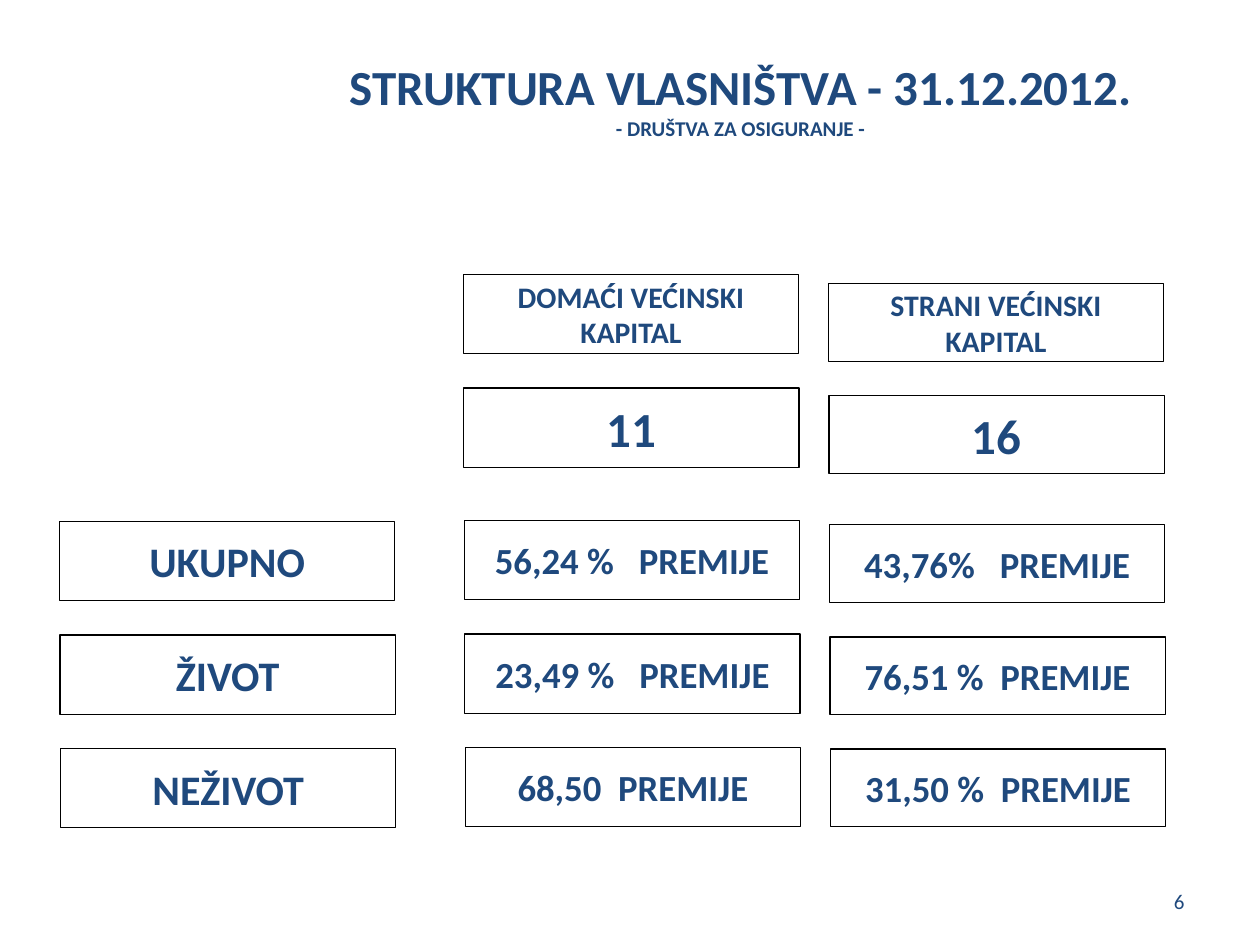
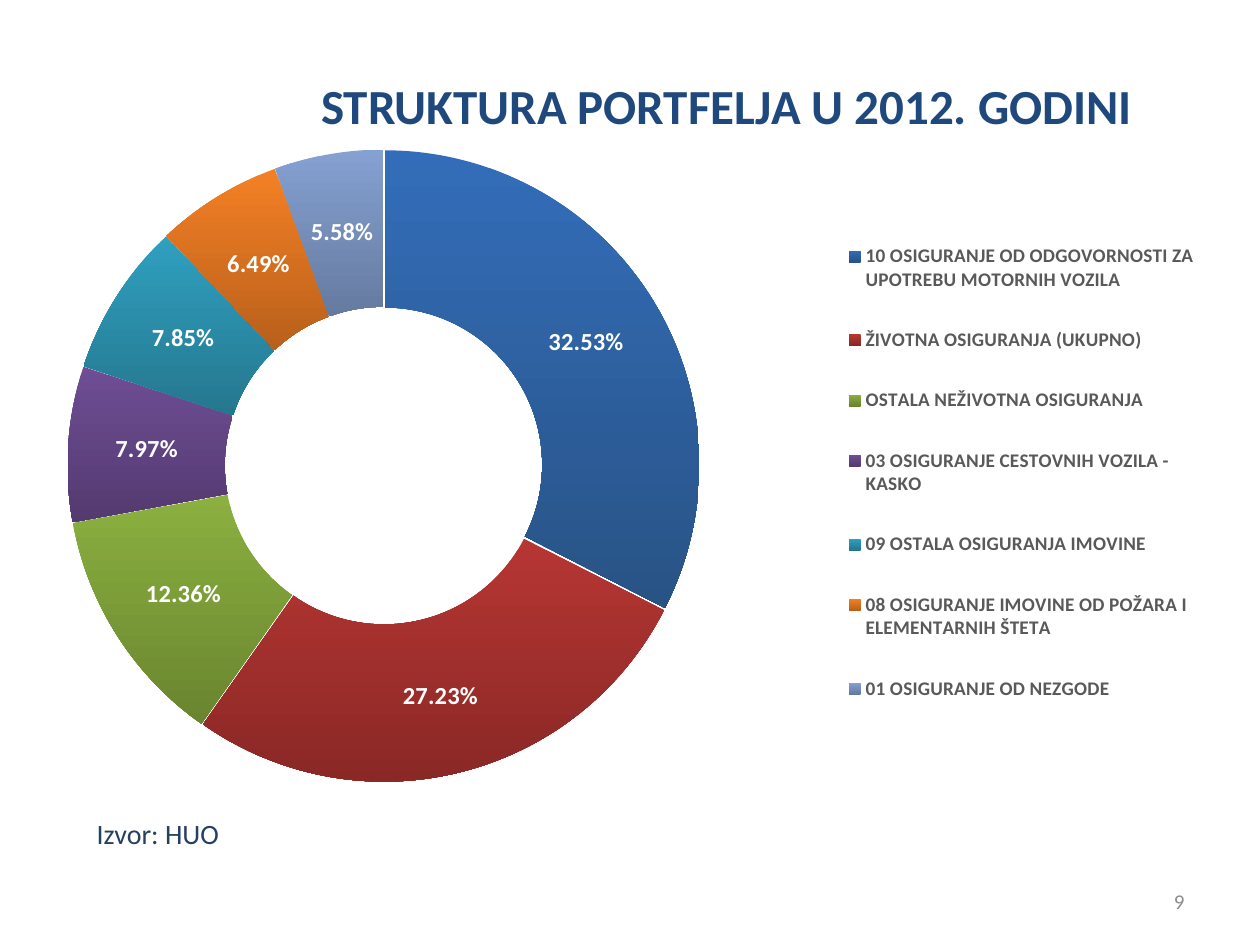
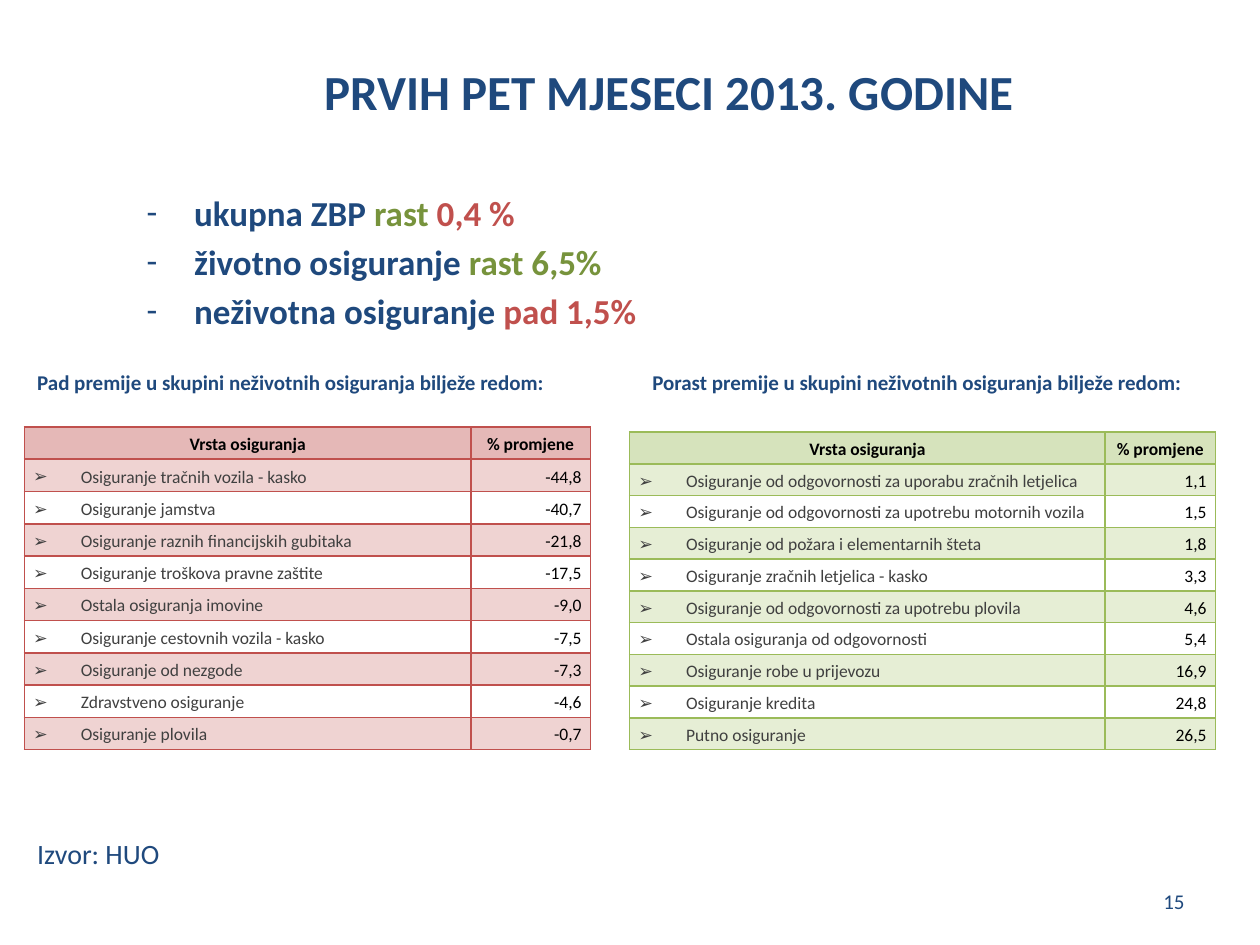
from lxml.etree import SubElement
from pptx import Presentation
from pptx.chart.data import CategoryChartData
from pptx.dml.color import RGBColor
from pptx.enum.chart import XL_CHART_TYPE, XL_LEGEND_POSITION
from pptx.enum.shapes import MSO_SHAPE
from pptx.enum.text import MSO_ANCHOR, PP_ALIGN
from pptx.oxml import parse_xml
from pptx.oxml.ns import nsdecls, qn
from pptx.util import Cm, Pt

NAVY = RGBColor(0x1F, 0x49, 0x7D)
DARK_NAVY = RGBColor(0x25, 0x40, 0x61)
BLACK = RGBColor(0, 0, 0)
WHITE = RGBColor(0xFF, 0xFF, 0xFF)
GREY = RGBColor(0x8C, 0x8C, 0x8C)
LEGEND_GREY = RGBColor(0x59, 0x59, 0x59)
CELL_GREY = RGBColor(0x40, 0x40, 0x40)
RISE = RGBColor(0x77, 0x93, 0x3C)
RED = RGBColor(0xC0, 0x50, 0x4D)
RED_HEAD = RGBColor(0xE5, 0xB8, 0xB7)
RED_BAND = RGBColor(0xEF, 0xD3, 0xD2)
GREEN = RGBColor(0x9B, 0xBB, 0x59)
GREEN_HEAD = RGBColor(0xD6, 0xE3, 0xBC)
GREEN_BAND = RGBColor(0xE6, 0xEE, 0xD5)

# Top and bottom colour of each ring segment
SEGMENT_COLOURS = [
    (RGBColor(0x33, 0x6D, 0xB9), RGBColor(0x28, 0x53, 0x85)),
    (RGBColor(0xB6, 0x36, 0x33), RGBColor(0x8A, 0x28, 0x26)),
    (RGBColor(0x8B, 0xB0, 0x40), RGBColor(0x69, 0x85, 0x2F)),
    (RGBColor(0x6F, 0x4D, 0x95), RGBColor(0x53, 0x3A, 0x6F)),
    (RGBColor(0x2F, 0xA0, 0xC0), RGBColor(0x25, 0x77, 0x8E)),
    (RGBColor(0xF4, 0x80, 0x25), RGBColor(0xB8, 0x60, 0x1B)),
    (RGBColor(0x85, 0xA1, 0xD2), RGBColor(0x65, 0x7A, 0x9F)),
]


def set_layout(parent, position, left, top, width, height, inner=False):
    """Give a chart part a fixed place, as fractions of the chart."""
    for layout in parent.findall(qn("c:layout")):
        parent.remove(layout)
    target = '<c:layoutTarget val="inner"/>' if inner else ""
    parent.insert(position, parse_xml(
        f'<c:layout {nsdecls("c")}><c:manualLayout>{target}'
        '<c:xMode val="edge"/><c:yMode val="edge"/>'
        f'<c:x val="{left}"/><c:y val="{top}"/>'
        f'<c:w val="{width}"/><c:h val="{height}"/>'
        '</c:manualLayout></c:layout>'))


class SlideWriter:
    """Holds the deck's style and the slide being written."""

    font = "Calibri"

    def __init__(self):
        self.deck = Presentation()
        self.deck.slide_width, self.deck.slide_height = Cm(25.4), Cm(19.05)
        self.page = None

    def new_page(self, layout, number, colour=NAVY):
        self.page = self.deck.slides.add_slide(self.deck.slide_layouts[layout])
        self.text(18.21, 17.65, 5.92, 1.02, str(number), 12, colour, bold=False,
                  align=PP_ALIGN.RIGHT, anchor=MSO_ANCHOR.MIDDLE)

    def span(self, para, text, size, colour=NAVY, bold=True, spacing=0):
        span = para.add_run()
        span.text = text
        font = span.font
        font.name, font.size, font.bold = self.font, Pt(size), bold
        font.color.rgb = colour
        if spacing:
            span._r.get_or_add_rPr().set("spc", str(round(spacing * 100)))

    def bullet(self, para, mark):
        props = para._p.get_or_add_pPr()
        props.set("marL", str(Cm(0.96)))
        props.set("indent", str(-Cm(0.96)))
        SubElement(props, qn("a:buFont")).set("typeface", self.font)
        SubElement(props, qn("a:buChar")).set("char", mark)

    def place(self, shape, left, top, width, height):
        shape.left, shape.top = Cm(left), Cm(top)
        shape.width, shape.height = Cm(width), Cm(height)

    def title(self, left, top, width, height, text, subtitle=None):
        shape = self.page.shapes.title
        self.place(shape, left, top, width, height)
        frame = shape.text_frame
        frame.vertical_anchor = MSO_ANCHOR.MIDDLE
        self.span(frame.paragraphs[0], text, 28)
        if subtitle:
            self.span(frame.add_paragraph(), subtitle, 12)

    def text(self, left, top, width, height, text, size, colour=NAVY, bold=True,
             align=PP_ALIGN.LEFT, anchor=MSO_ANCHOR.TOP):
        box = self.page.shapes.add_textbox(Cm(left), Cm(top), Cm(width), Cm(height))
        frame = box.text_frame
        frame.word_wrap = True
        frame.vertical_anchor = anchor
        frame.paragraphs[0].alignment = align
        self.span(frame.paragraphs[0], text, size, colour, bold)

    def bullets(self, left, top, width, height, items):
        body = self.page.placeholders[1]
        self.place(body, left, top, width, height)
        frame = body.text_frame
        frame.margin_top = Cm(0.94)
        for index, parts in enumerate(items):
            para = frame.add_paragraph() if index else frame.paragraphs[0]
            self.bullet(para, "-")
            para.space_before = Pt(4 if index else 0)
            for text, colour in parts:
                self.span(para, text, 20, colour)

    def box(self, group, left, top, height, parts, size, wrap=False):
        box = group.shapes.add_shape(
            MSO_SHAPE.RECTANGLE, Cm(left), Cm(top), Cm(6.76), Cm(height))
        box.shadow.inherit = False
        box.fill.background()
        box.line.color.rgb, box.line.width = BLACK, Pt(0.75)
        frame = box.text_frame
        frame.word_wrap = wrap
        frame.vertical_anchor = MSO_ANCHOR.MIDDLE
        para = frame.paragraphs[0]
        para.alignment = PP_ALIGN.CENTER
        for text, spacing in parts:
            self.span(para, text, size, spacing=spacing)

    def doughnut(self, left, top, width, height, shares):
        data = CategoryChartData()
        data.categories = [name for name, _ in shares]
        data.add_series("Series 1", [share for _, share in shares])
        chart = self.page.shapes.add_chart(
            XL_CHART_TYPE.DOUGHNUT, Cm(left), Cm(top), Cm(width), Cm(height), data).chart
        chart.has_title = False
        chart.font.name, chart.font.size = self.font, Pt(10)
        chart.font.color.rgb = BLACK

        # Ring position and segments
        area = chart._chartSpace.chart.plotArea
        set_layout(area, 0, 0.02, 0, 0.54, 0.98, inner=True)
        plot = chart.plots[0]
        plot.vary_by_categories = True
        series = plot.series[0]
        series._element.find(qn("c:tx")).addnext(
            parse_xml(f'<c:explosion {nsdecls("c")} val="1"/>'))
        for index, colours in enumerate(SEGMENT_COLOURS):
            fill = series.points[index].format.fill
            fill.gradient()
            fill.gradient_angle = 270
            for stop, colour in zip(fill.gradient_stops, colours):
                stop.color.rgb = colour

        # Labels and legend
        plot.has_data_labels = True
        labels = plot.data_labels
        labels.show_percentage, labels.show_value = True, False
        labels.number_format, labels.number_format_is_linked = "0.00%", False
        chart.has_legend = True
        legend = chart.legend
        legend.position = XL_LEGEND_POSITION.RIGHT
        legend.include_in_layout = False
        set_layout(legend._element, 1, 0.68, 0.11, 0.31, 0.78)
        for item, size, colour in ((labels, 14, WHITE), (legend, 11, LEGEND_GREY)):
            font = item.font
            font.name, font.size, font.bold = self.font, Pt(size), True
            font.color.rgb = colour

    def cell(self, cell, text, line, fill, colour, align, header, first, mark=None):
        cell.margin_left = cell.margin_right = Cm(0.18)
        cell.margin_top = cell.margin_bottom = 0
        cell.vertical_anchor = MSO_ANCHOR.MIDDLE
        para = cell.text_frame.paragraphs[0]
        if mark:
            self.bullet(para, mark)
        para.alignment, para.line_spacing = align, 1.15
        self.span(para, text, 10, colour, bold=header)
        props = cell._tc.get_or_add_tcPr()
        for side in "LRTB":
            thick = (header and side == "B") or (first and side == "T")
            props.append(parse_xml(
                f'<a:ln{side} {nsdecls("a")} w="{Pt(1.5 if thick else 1)}"><a:solidFill>'
                f'<a:srgbClr val="{line}"/></a:solidFill></a:ln{side}>'))
        if fill:
            cell.fill.solid()
            cell.fill.fore_color.rgb = fill
        else:
            cell.fill.background()

    def table(self, left, top, widths, row_height, line, head, band, rows):
        count = len(rows) + 1
        table = self.page.shapes.add_table(
            count, 2, Cm(left), Cm(top), Cm(sum(widths)), Cm(row_height * count)).table
        table.first_row = table.horz_banding = False
        for column, width in zip(table.columns, widths):
            column.width = Cm(width)
        for row in table.rows:
            row.height = Cm(row_height)
        for column, text in enumerate(("Vrsta osiguranja", "% promjene")):
            self.cell(table.cell(0, column), text, line, head, BLACK,
                      PP_ALIGN.CENTER, True, False)
        for index, (name, change) in enumerate(rows, 1):
            fill = band if index % 2 else None
            self.cell(table.cell(index, 0), name, line, fill, CELL_GREY,
                      PP_ALIGN.LEFT, False, index == 1, "➢")
            self.cell(table.cell(index, 1), change, line, fill, BLACK,
                      PP_ALIGN.RIGHT, False, index == 1)


def ownership(writer):
    writer.new_page(5, 6)
    writer.title(3.5, 0.71, 22.86, 2.54, "STRUKTURA VLASNIŠTVA - 31.12.2012.",
                 "- DRUŠTVA ZA OSIGURANJE -")

    # Capital columns: heading, number of companies, premium shares
    columns = [
        (9.34, 5.53, 10.49, 2.29, 1.6, "DOMAĆI VEĆINSKI KAPITAL", "11",
         [("56,24 %", 9.5), ("23,49 %", 9.5), ("68,50", 4.75)]),
        (16.7, 5.72, 10.58, 2.26, 1.57, "STRANI VEĆINSKI KAPITAL", "16",
         [("43,76%", 9.5), ("76,51 %", 4.75), ("31,50 %", 4.75)]),
    ]
    for left, top, share_top, pitch, height, heading, number, shares in columns:
        group = writer.page.shapes.add_group_shape()
        writer.box(group, left, top, height, [(heading, 0)], 17, wrap=True)
        writer.box(group, left + 0.01, top + pitch, height, [(number, 0)], 28)
        for row, (share, gap) in enumerate(shares):
            parts = [(share, 0), (" ", gap), ("PREMIJE", 0)]
            writer.box(group, left + 0.02 + row * 0.01, share_top + row * pitch,
                       height, parts, 21)

    # Row labels
    group = writer.page.shapes.add_group_shape()
    for row, label in enumerate(("UKUPNO", "ŽIVOT", "NEŽIVOT")):
        writer.box(group, 1.2 + row * 0.01, 10.51 + row * 2.29, 1.6, [(label, 0)], 24)


def portfolio(writer):
    writer.new_page(5, 9, GREY)
    writer.title(3.89, 0.53, 21.51, 3.18, "STRUKTURA PORTFELJA U 2012. GODINI")
    writer.text(1.7, 16.33, 20.19, 0.94, "Izvor: HUO", 16, DARK_NAVY, bold=False)
    writer.doughnut(0.89, 2.69, 23.6, 13.67, [
        ("10 OSIGURANJE OD ODGOVORNOSTI ZA UPOTREBU MOTORNIH VOZILA", 32.53),
        ("ŽIVOTNA OSIGURANJA (UKUPNO)", 27.23),
        ("OSTALA NEŽIVOTNA OSIGURANJA", 12.36),
        ("03 OSIGURANJE CESTOVNIH VOZILA - KASKO", 7.97),
        ("09 OSTALA OSIGURANJA IMOVINE", 7.85),
        ("08 OSIGURANJE IMOVINE OD POŽARA I ELEMENTARNIH ŠTETA", 6.49),
        ("01 OSIGURANJE OD NEZGODE", 5.58),
    ])


def first_months(writer):
    writer.new_page(1, 15)
    writer.title(2.59, 1.1, 21.79, 1.45, "PRVIH PET MJESECI 2013. GODINE")
    writer.bullets(2.7, 2.92, 21.62, 14.4, [
        [("ukupna ZBP ", NAVY), ("rast", RISE), (" 0,4 %", RED)],
        [("životno osiguranje ", NAVY), ("rast 6,5%", RISE)],
        [("neživotna osiguranje ", NAVY), ("pad 1,5%", RED)],
    ])
    writer.text(0.5, 7.32, 11, 1.3,
                "Pad premije u skupini neživotnih osiguranja bilježe redom:", 12)
    writer.text(12.9, 7.32, 12.01, 1.3,
                "Porast premije u skupini neživotnih osiguranja bilježe redom:", 12)
    writer.text(0.5, 16.73, 20.19, 0.94, "Izvor: HUO", 16, bold=False)

    # Falling and rising lines of insurance
    writer.table(0.49, 8.61, (9, 2.41), 0.65, RED, RED_HEAD, RED_BAND, [
        ("Osiguranje tračnih vozila - kasko", "-44,8"),
        ("Osiguranje jamstva", "-40,7"),
        ("Osiguranje raznih financijskih gubitaka", "-21,8"),
        ("Osiguranje troškova pravne zaštite", "-17,5"),
        ("Ostala osiguranja imovine", "-9,0"),
        ("Osiguranje cestovnih vozila - kasko", "-7,5"),
        ("Osiguranje od nezgode", "-7,3"),
        ("Zdravstveno osiguranje", "-4,6"),
        ("Osiguranje plovila", "-0,7"),
    ])
    writer.table(12.69, 8.71, (9.59, 2.22), 0.64, GREEN, GREEN_HEAD, GREEN_BAND, [
        ("Osiguranje od odgovornosti za uporabu zračnih letjelica", "1,1"),
        ("Osiguranje od odgovornosti za upotrebu motornih vozila", "1,5"),
        ("Osiguranje od požara i elementarnih šteta", "1,8"),
        ("Osiguranje zračnih letjelica - kasko", "3,3"),
        ("Osiguranje od odgovornosti za upotrebu plovila", "4,6"),
        ("Ostala osiguranja od odgovornosti", "5,4"),
        ("Osiguranje robe u prijevozu", "16,9"),
        ("Osiguranje kredita", "24,8"),
        ("Putno osiguranje", "26,5"),
    ])


def main():
    writer = SlideWriter()
    ownership(writer)
    portfolio(writer)
    first_months(writer)
    writer.deck.save("out.pptx")


if __name__ == "__main__":
    main()
